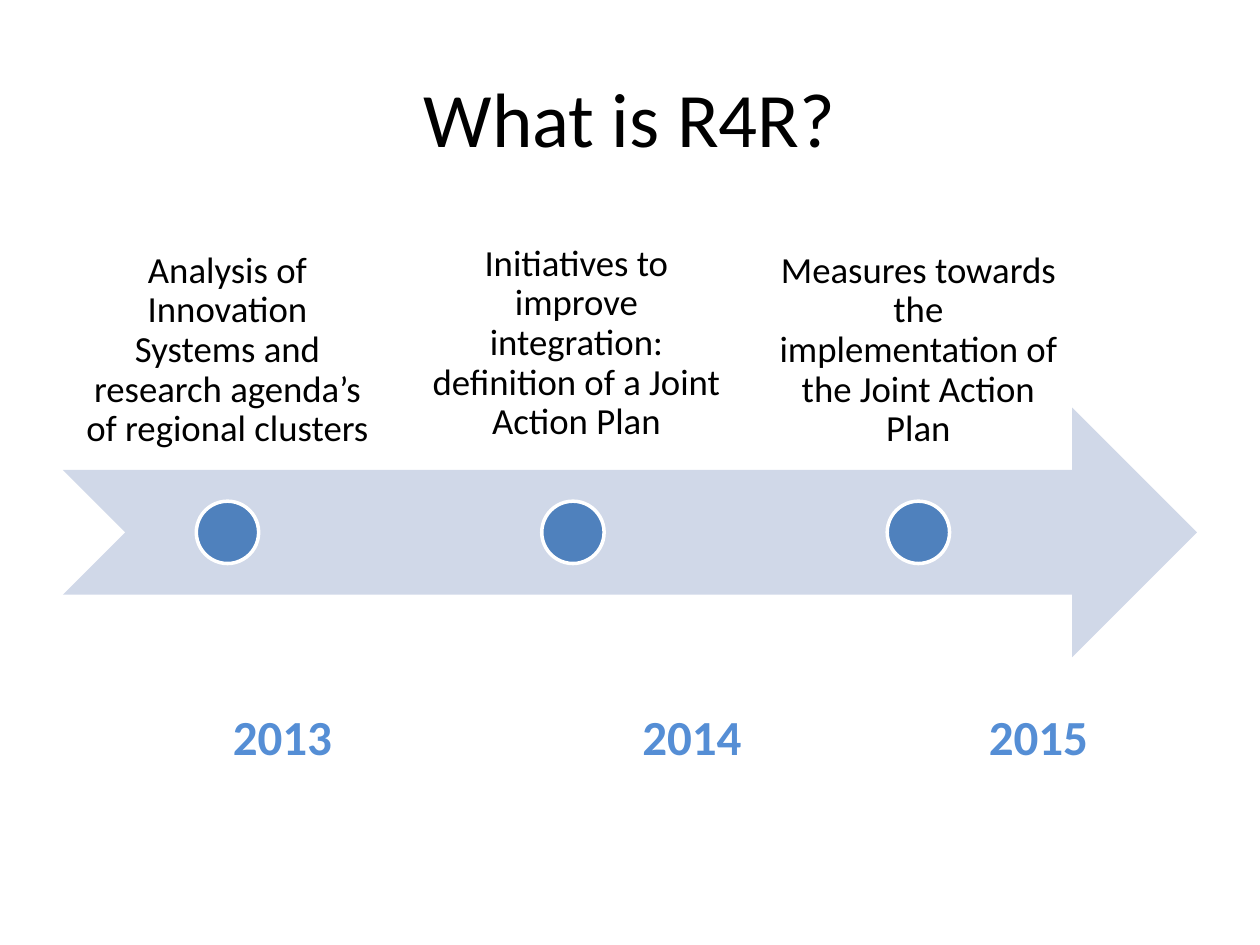
from pptx import Presentation
from pptx.dml.color import RGBColor
from pptx.enum.shapes import MSO_SHAPE as Kind
from pptx.enum.text import MSO_ANCHOR as Anchor, PP_ALIGN as Align
from pptx.util import Pt
from lxml.etree import SubElement

FONT = "Calibri"
HUES = {"text": "000000", "band": "D0D8E8", "dot": "4F81BD",
        "ring": "FFFFFF", "year": "558ED5"}
STEPS = [
    ("2013", "Analysis of Innovation Systems and research agenda’s "
             "of regional clusters"),
    ("2014", "Initiatives to improve integration: definition of a Joint "
             "Action Plan"),
    ("2015", "Measures towards the implementation of the Joint Action Plan"),
]
TABS = [72, 306, 504]


def hue(name):
    return RGBColor.from_string(HUES[name])


def add_text(shapes, box, words, size, color="text", bold=False,
             anchor=Anchor.TOP, align=Align.CENTER, inset=None, tabs=()):
    frame = shapes.add_textbox(*map(Pt, box)).text_frame
    frame.word_wrap = True
    frame.vertical_anchor = anchor
    if inset is not None:
        frame.margin_left = frame.margin_right = Pt(inset)
        frame.margin_top = frame.margin_bottom = Pt(inset)
    para = frame.paragraphs[0]
    para.alignment = align
    if tabs:
        props = para._p.get_or_add_pPr()
        space = "{" + props.nsmap["a"] + "}"
        stops = SubElement(props, space + "tabLst")
        for pos in tabs:
            SubElement(stops, space + "tab", pos=str(Pt(pos)), algn="l")
    run = para.add_run()
    run.text = words
    font = run.font
    font.name, font.size, font.bold = FONT, Pt(size), bold
    font.color.rgb = hue(color)
    return para


def add_shape(shapes, kind, box, fill, line=None):
    shape = shapes.add_shape(kind, *map(Pt, box))
    shape.shadow.inherit = False
    shape.fill.solid()
    shape.fill.fore_color.rgb = hue(fill)
    if line:
        shape.line.color.rgb = hue(line)
        shape.line.width = Pt(2)
    else:
        shape.line.fill.background()


def add_flow(slide, box):
    """Arrow across the middle, with a label and a dot for each step."""
    left, top, width, height = box
    shapes = slide.shapes.add_group_shape().shapes
    band = height * 0.4
    add_shape(shapes, Kind.NOTCHED_RIGHT_ARROW,
              (left, top + height * 0.3, width, band), "band")
    wide, pitch, dot = 188, 197.4, band / 4
    for i, (_, words) in enumerate(STEPS):
        x = left + i * pitch
        middle = i == 1
        shift = 2 if middle else 0
        para = add_text(shapes, (x + shift, top + shift, wide, band), words,
                        21, anchor=Anchor.TOP if middle else Anchor.BOTTOM,
                        inset=11.6)
        para.line_spacing = 0.9
        add_shape(shapes, Kind.OVAL,
                  (x + (wide - dot) / 2, top + (height - dot) / 2, dot, dot),
                  "dot", "ring")


def add_years(slide, box):
    words = "".join("\t" + year for year, _ in STEPS)
    add_text(slide.shapes, box, words, 28, "year", bold=True,
             align=Align.LEFT, tabs=TABS)


def main():
    deck = Presentation()
    deck.slide_width, deck.slide_height = Pt(720), Pt(540)
    slide = deck.slides.add_slide(deck.slide_layouts[6])
    add_text(slide.shapes, (36, 21.6, 648, 90), "What is R4R?", 44,
             anchor=Anchor.MIDDLE)
    add_flow(slide, (36, 126, 648, 356.4))
    add_years(slide, (54, 400.3, 612, 41))
    deck.save("out.pptx")


if __name__ == "__main__":
    main()
